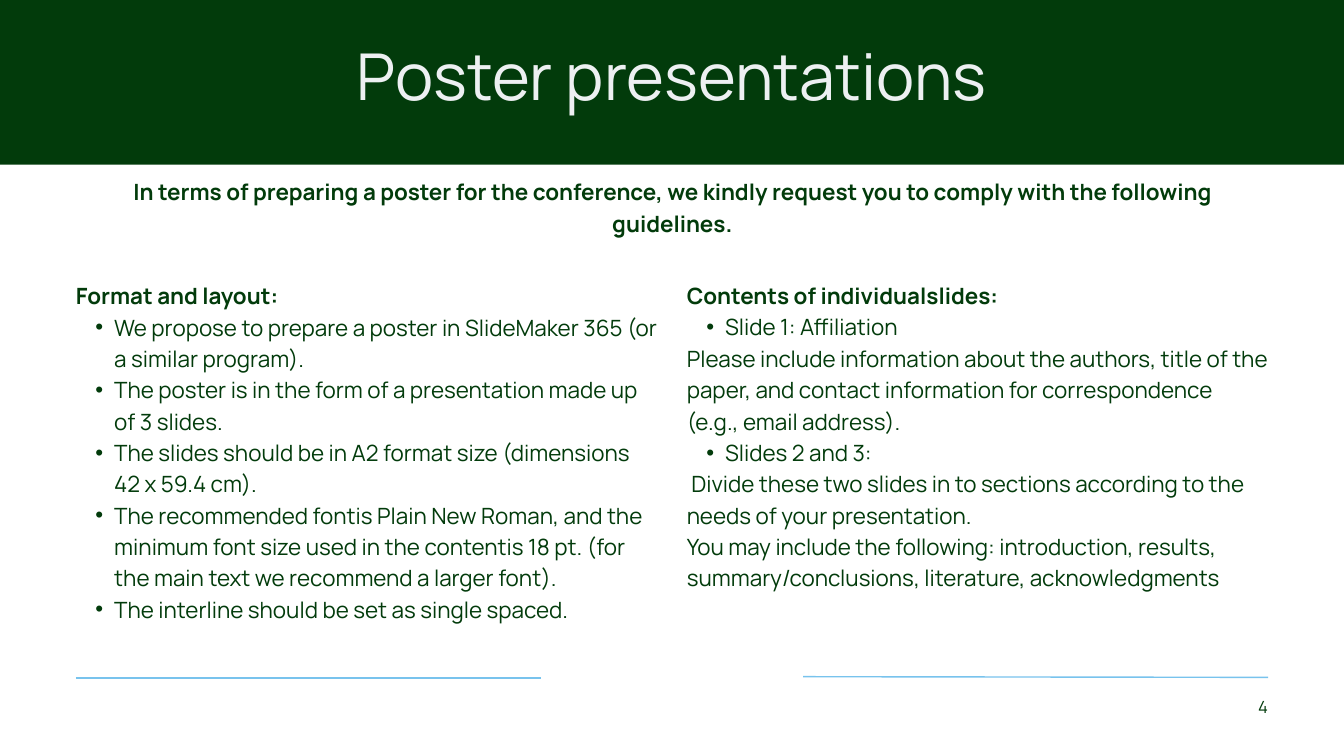
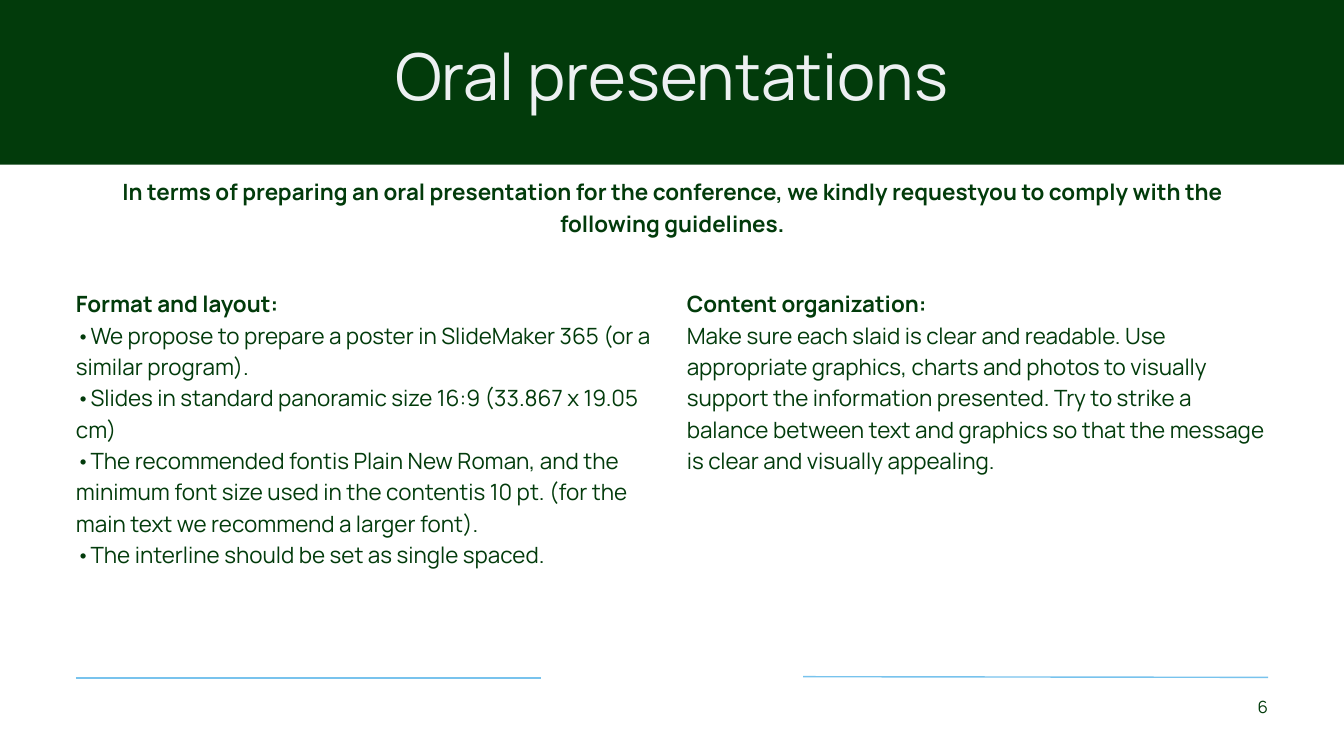
from lxml import etree
from pptx import Presentation
from pptx.dml.color import RGBColor
from pptx.enum.shapes import MSO_CONNECTOR, MSO_SHAPE
from pptx.enum.text import PP_ALIGN
from pptx.oxml.ns import qn
from pptx.util import Inches, Pt

LEFT, MID, RIGHT = PP_ALIGN.LEFT, PP_ALIGN.CENTER, PP_ALIGN.RIGHT
RECT = MSO_SHAPE.RECTANGLE
LINE = MSO_CONNECTOR.STRAIGHT
COLORS = {"green": "023B0B", "pale": "EDF0F2", "blue": "78C3ED"}
FONT = "Manrope"
WIDE, HIGH = 20, 11.25
EDGE, COL, STEP = 1.13, 8.65, 9.09
HEAD = 0.47

TALKS = [
    {
        "title": "Poster presentations",
        "intro": "In terms of preparing a poster for the conference, we kindly "
                 "request you to comply with the following guidelines.",
        "page": "4",
        "top": 4.13,
        "cols": [
            ("Format and layout:", [
                (True, "We propose to prepare a poster in SlideMaker 365 (or a similar program)."),
                (True, "The poster is in the form of a presentation made up of 3 slides."),
                (True, "The slides should be in A2 format size (dimensions 42 x 59.4 cm)."),
                (True, "The recommended fontis Plain New Roman, and the minimum font size used "
                       "in the contentis 18 pt. (for the main text we recommend a larger font)."),
                (True, "The interline should be set as single spaced."),
            ], 5.49),
            ("Contents of individualslides:", [
                (True, "Slide 1: Affiliation"),
                (False, "Please include information about the authors, title of the paper, and "
                        "contact information for correspondence (e.g., email address)."),
                (True, "Slides 2 and 3:"),
                (False, " Divide these two slides in to sections according to the needs of "
                        "your presentation."),
                (False, "You may include the following: introduction, results, "
                        "summary/conclusions, literature, acknowledgments"),
            ], 4.57),
        ],
    },
    {
        "title": "Oral presentations",
        "intro": "In terms of preparing an oral presentation for the conference, we kindly "
                 "requestyou to comply with the following guidelines.",
        "page": "6",
        "top": 4.25,
        "cols": [
            ("Format and layout:", [
                (False, "•We propose to prepare a poster in SlideMaker 365 (or a similar program)."),
                (False, "•Slides in standard panoramic size 16:9 (33.867 x 19.05 cm)"),
                (False, "•The recommended fontis Plain New Roman, and the minimum font size used "
                        "in the contentis 10 pt. (for the main text we recommend a larger font)."),
                (False, "•The interline should be set as single spaced."),
            ], 4.11),
            ("Content organization:", [
                (False, "Make sure each slaid is clear and readable. Use appropriate graphics, "
                        "charts and photos to visually support the information presented. Try to "
                        "strike a balance between text and graphics so that the message is clear "
                        "and visually appealing."),
            ], 2.74),
        ],
    },
]


def tint(name):
    return RGBColor.from_string(COLORS[name])


def add_dot(para):
    props = para._p.get_or_add_pPr()
    props.set("marL", str(Inches(0.57)))
    props.set("indent", str(Inches(-0.28)))
    etree.SubElement(props, qn("a:buFont")).set("typeface", "Arial")
    etree.SubElement(props, qn("a:buChar")).set("char", "•")


def add_text(slide, box, items, size=24, lead=33.6, color="green", bold=False, align=LEFT):
    frame = slide.shapes.add_textbox(*map(Inches, box)).text_frame
    frame.word_wrap = True
    frame.margin_left = frame.margin_right = frame.margin_top = frame.margin_bottom = 0
    for i, (dot, text) in enumerate(items):
        para = frame.add_paragraph() if i else frame.paragraphs[0]
        para.text = text
        para.alignment = align
        para.line_spacing = Pt(lead)
        if dot:
            add_dot(para)
        font = para.font
        font.name, font.size, font.bold = FONT, Pt(size), bold
        font.color.rgb = tint(color)


def add_rule(slide, x, y, end_x, end_y):
    rule = slide.shapes.add_connector(LINE, *map(Inches, (x, y, end_x, end_y)))
    rule.line.color.rgb = tint("blue")
    rule.line.width = Pt(1.5)
    etree.SubElement(rule._element.spPr, qn("a:effectLst"))


def add_band(slide, box, title):
    x, y, w, h = box
    band = slide.shapes.add_shape(RECT, *map(Inches, box))
    band.shadow.inherit = False
    band.fill.solid()
    band.fill.fore_color.rgb = tint("green")
    band.line.fill.background()
    add_text(slide, (x + 4.81, y + 0.72, w - 9.62, 1.08), [(False, title)],
             size=69.2, lead=69.2, color="pale", align=MID)


def add_foot(slide, box, page):
    x, y, w, h = box
    end = x + w
    add_rule(slide, x, y + 0.02, x + 6.92, y + 0.02)
    add_rule(slide, end - 6.92, y, end, y + 0.01)
    add_text(slide, (end - 1.57, y + 0.25, 1.57, 0.36), [(False, page)],
             size=18, lead=25.2, align=RIGHT)


def add_column(slide, box, head, items):
    x, y, w, h = box
    add_text(slide, (x, y, w, HEAD), [(False, head)], bold=True)
    add_text(slide, (x, y + HEAD, w, h - HEAD), items)


def add_talk(deck, talk):
    slide = deck.slides.add_slide(deck.slide_layouts[6])
    add_band(slide, (0, 0, WIDE, 2.45), talk["title"])
    add_text(slide, (1.66, 2.59, 16.69, 0.9), [(False, talk["intro"])], bold=True, align=MID)
    for i, (head, items, tall) in enumerate(talk["cols"]):
        add_column(slide, (EDGE + i * STEP, talk["top"], COL, HEAD + tall), head, items)
    add_foot(slide, (EDGE, 10.07, WIDE - 2 * EDGE, 0.61), talk["page"])


def main():
    deck = Presentation()
    deck.slide_width, deck.slide_height = Inches(WIDE), Inches(HIGH)
    for talk in TALKS:
        add_talk(deck, talk)
    deck.save("out.pptx")


if __name__ == "__main__":
    main()
